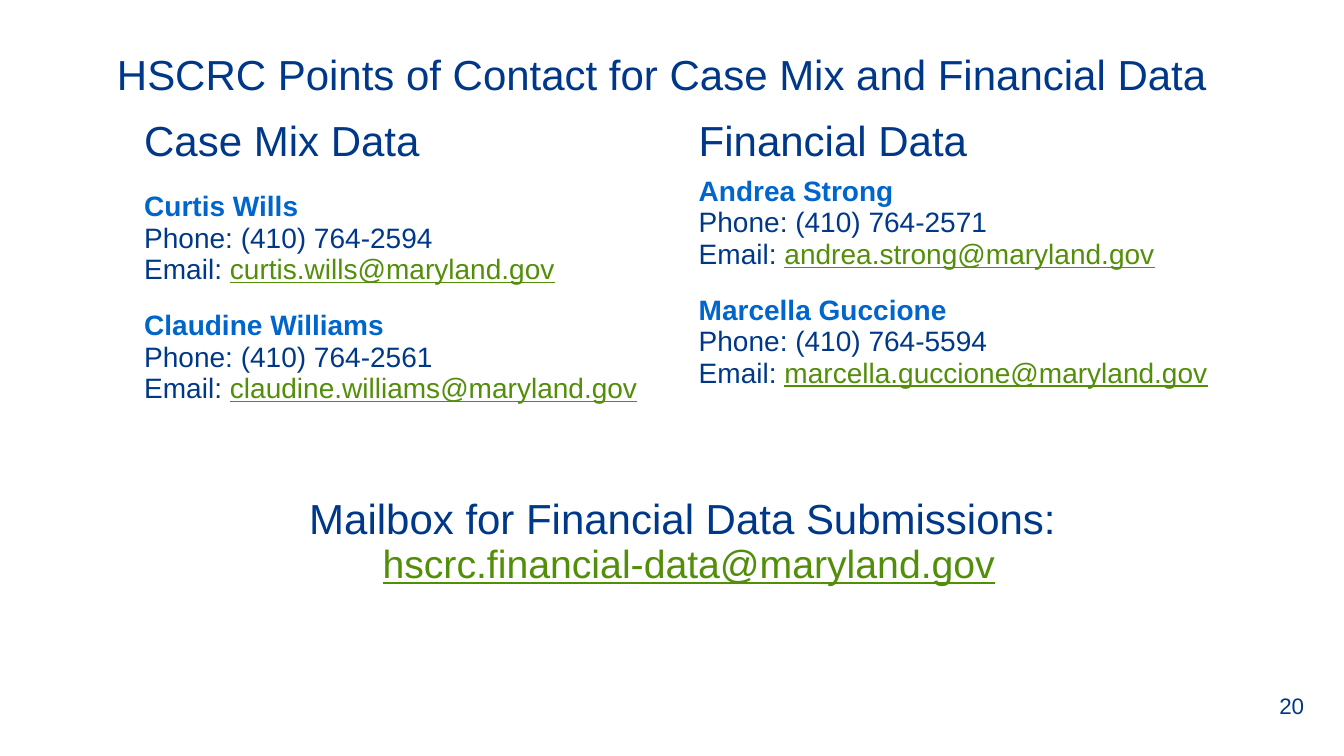
from dataclasses import dataclass

from pptx import Presentation
from pptx.dml.color import RGBColor
from pptx.enum.text import MSO_ANCHOR, MSO_AUTO_SIZE, PP_ALIGN
from pptx.table import _Cell
from pptx.text.text import TextFrame, _Paragraph
from pptx.util import Inches, Pt

NAVY = RGBColor(0x00, 0x38, 0x89)
BLUE = RGBColor(0x00, 0x66, 0xCC)
GREEN = RGBColor(0x53, 0x8E, 0x09)
LEFT, CENTER = PP_ALIGN.LEFT, PP_ALIGN.CENTER
TOP, MIDDLE, BOTTOM = MSO_ANCHOR.TOP, MSO_ANCHOR.MIDDLE, MSO_ANCHOR.BOTTOM
FIXED = MSO_AUTO_SIZE.NONE


@dataclass
class Person:
    name: str
    phone: str
    email: str


@dataclass
class Team:
    title: str
    anchor: MSO_ANCHOR
    people: list[Person]


TEAMS = [
    Team("Case Mix Data", BOTTOM, [
        Person("Curtis Wills", "(410) 764-2594", "curtis.wills@maryland.gov"),
        Person("Claudine Williams", "(410) 764-2561", "claudine.williams@maryland.gov"),
    ]),
    Team("Financial Data", TOP, [
        Person("Andrea Strong", "(410) 764-2571", "andrea.strong@maryland.gov"),
        Person("Marcella Guccione", "(410) 764-5594", "marcella.guccione@maryland.gov"),
    ]),
]
WIDTHS = [5.5, 5.5]
HEIGHTS = [0.57, 1.18, 1.18, 2.63]


def style(para: _Paragraph, size: int, color: RGBColor = NAVY,
          bold: bool = False, align: PP_ALIGN = LEFT) -> None:
    para.alignment = align
    font = para.font
    font.name, font.size, font.bold = "Arial", Pt(size), bold
    font.color.rgb = color


def write(frame: TextFrame, text: str, size: int) -> None:
    frame.text = text
    style(frame.paragraphs[0], size)


def add_mail(para: _Paragraph, email: str) -> None:
    run = para.add_run()
    run.text = email
    run.font.underline = True
    run.font.color.rgb = GREEN


def add_person(cell: _Cell, person: Person, anchor: MSO_ANCHOR) -> None:
    cell.vertical_anchor = anchor
    frame = cell.text_frame
    frame.text = f"{person.name}\nPhone: {person.phone}\nEmail: "
    name, phone, mail = frame.paragraphs
    style(name, 20, BLUE, bold=True)
    style(phone, 20)
    style(mail, 20)
    add_mail(mail, person.email)


def main() -> None:
    deck = Presentation()
    deck.slide_width, deck.slide_height = Inches(13.33), Inches(7.5)
    slide = deck.slides.add_slide(deck.slide_layouts[5])

    # Title
    title = slide.shapes.title
    title.left, title.top = Inches(1.06), Inches(0.38)
    title.width, title.height = Inches(11.4), Inches(0.7)
    frame = title.text_frame
    frame.auto_size, frame.vertical_anchor = FIXED, MIDDLE
    write(frame, "HSCRC Points of Contact for Case Mix and Financial Data", 30)

    # Table grid, without fills
    table = slide.shapes.add_table(
        len(HEIGHTS), len(WIDTHS), Inches(1.33), Inches(1.13),
        Inches(sum(WIDTHS)), Inches(sum(HEIGHTS))).table
    table.first_row = table.horz_banding = False
    for col, width in zip(table.columns, WIDTHS):
        col.width = Inches(width)
    for row, height in zip(table.rows, HEIGHTS):
        row.height = Inches(height)
    for cell in table.iter_cells():
        cell.fill.background()

    # Contacts
    for col, team in enumerate(TEAMS):
        write(table.cell(0, col).text_frame, team.title, 30)
        for row, person in enumerate(team.people, start=1):
            add_person(table.cell(row, col), person, team.anchor)

    # Shared mailbox
    box = table.cell(3, 0)
    box.merge(table.cell(3, 1))
    box.vertical_anchor = MIDDLE
    box.text_frame.text = "Mailbox for Financial Data Submissions: "
    head = box.text_frame.paragraphs[0]
    style(head, 30, align=CENTER)
    mail = box.text_frame.add_paragraph()
    style(mail, 28, align=CENTER)
    add_mail(mail, "hscrc.financial-data@maryland.gov")

    # Page number
    page = slide.shapes.add_textbox(
        Inches(12.59), Inches(6.8), Inches(0.63), Inches(0.4)).text_frame
    page.word_wrap, page.vertical_anchor = True, MIDDLE
    write(page, "20", 16)

    deck.save("out.pptx")


if __name__ == "__main__":
    main()
